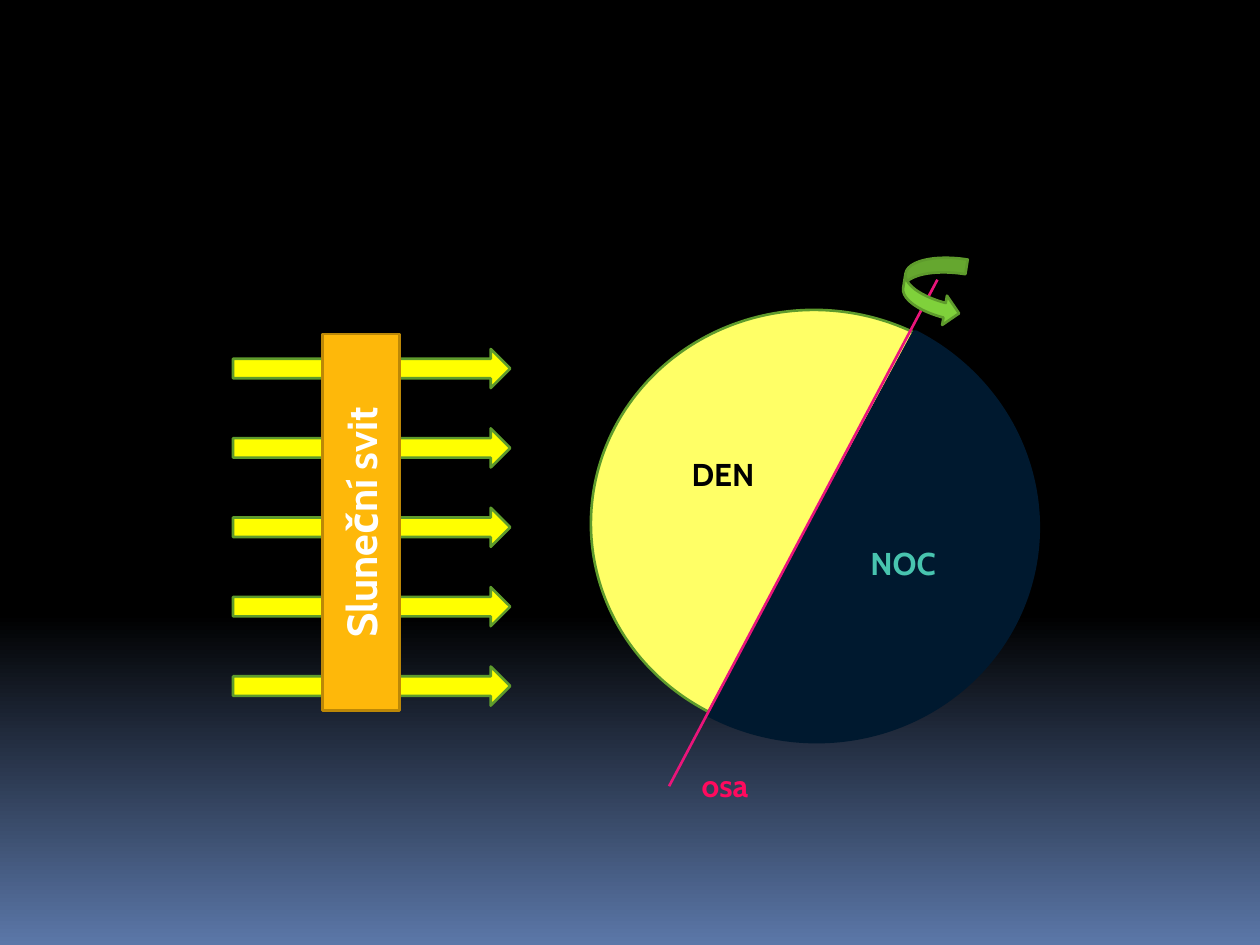
from dataclasses import dataclass

from lxml.etree import SubElement
from pptx import Presentation
from pptx.dml.color import RGBColor
from pptx.enum.shapes import MSO_CONNECTOR, MSO_SHAPE
from pptx.enum.text import MSO_ANCHOR, PP_ALIGN
from pptx.oxml.ns import qn
from pptx.util import Inches, Pt

GREEN = "5E9B2C"
NIGHT = "00192F"


@dataclass
class Box:
    left: float
    top: float
    width: float
    height: float

    def lengths(self):
        return [Inches(v) for v in (self.left, self.top, self.width, self.height)]


@dataclass
class Label:
    text: str
    box: Box
    color: str
    anchor: MSO_ANCHOR = MSO_ANCHOR.MIDDLE


LABELS = [
    Label("NOC", Box(6.81, 4.27, 0.79, 0.4), "48C4AF"),
    Label("DEN", Box(5.39, 3.56, 0.79, 0.4), "000000"),
    Label("osa", Box(5.47, 6.03, 1.18, 0.4), "FF0A5E", MSO_ANCHOR.TOP),
]


def rgb(color: str) -> RGBColor:
    return RGBColor.from_string(color)


def add_background(slide):
    """Black down to 65 % of the height, then fading to blue."""
    fill = slide.background.fill
    fill.gradient()
    fill.gradient_angle = 270
    for stop, (position, color) in zip(fill.gradient_stops, [(0.65, "000000"), (1, "5B77A8")]):
        stop.position = position
        stop.color.rgb = rgb(color)


def add_shape(slide, kind, box: Box, fill: str, line: str, width=1.5, rotation=0.0):
    s = slide.shapes.add_shape(kind, *box.lengths())
    s.shadow.inherit = False
    s.fill.solid()
    s.fill.fore_color.rgb = rgb(fill)
    s.line.color.rgb = rgb(line)
    s.line.width = Pt(width)
    s.rotation = rotation
    return s


def write(s, text: str, *, color: str, size=18, align=PP_ALIGN.LEFT, anchor=MSO_ANCHOR.MIDDLE):
    tf = s.text_frame
    tf.word_wrap = True
    tf.vertical_anchor = anchor
    p = tf.paragraphs[0]
    p.alignment = align
    r = p.add_run()
    r.text = text
    r.font.name = "Cabin"
    r.font.size = Pt(size)
    r.font.bold = True
    r.font.color.rgb = rgb(color)


def add_sunlight(slide):
    for i in range(5):
        add_shape(slide, MSO_SHAPE.RIGHT_ARROW, Box(1.85, 2.77 + 0.63 * i, 2.2, 0.31), "FFFF00", GREEN)
    banner = add_shape(slide, MSO_SHAPE.RECTANGLE, Box(2.56, 2.65, 0.61, 2.99), "FEB80A", "BC8807")
    write(banner, "Sluneční svit", color="FFFFFF", size=24, align=PP_ALIGN.CENTER)
    banner.text_frame._txBody.bodyPr.set("vert", "vert270")


def add_earth(slide):
    add_shape(slide, MSO_SHAPE.OVAL, Box(4.69, 2.46, 3.54, 3.39), "FFFF66", GREEN)
    night = add_shape(slide, MSO_SHAPE.CHORD, Box(4.68, 2.45, 3.55, 3.42), NIGHT, NIGHT, 4, 11.7)
    night.adjustments[0] = 43.9
    night.adjustments[1] = 152.12
    night._element.spPr.xfrm.set("flipH", "1")


def add_axis(slide):
    ends = [Inches(v) for v in (7.44, 2.22, 5.31, 6.24)]
    axis = slide.shapes.add_connector(MSO_CONNECTOR.STRAIGHT, *ends)
    axis.line.color.rgb = rgb("EA157A")
    axis.line.width = Pt(1.5)
    SubElement(axis._element.spPr, qn("a:effectLst"))
    add_shape(slide, MSO_SHAPE.CURVED_RIGHT_ARROW, Box(7.17, 2.02, 0.47, 0.55), "7FD13B", GREEN, rotation=9.1)


def main():
    prs = Presentation()
    prs.slide_width, prs.slide_height = Inches(10), Inches(7.5)
    slide = prs.slides.add_slide(prs.slide_layouts[6])
    add_background(slide)
    add_sunlight(slide)
    add_earth(slide)
    add_axis(slide)
    for label in LABELS:
        s = slide.shapes.add_textbox(*label.box.lengths())
        write(s, label.text, color=label.color, anchor=label.anchor)
    prs.save("out.pptx")


if __name__ == "__main__":
    main()
